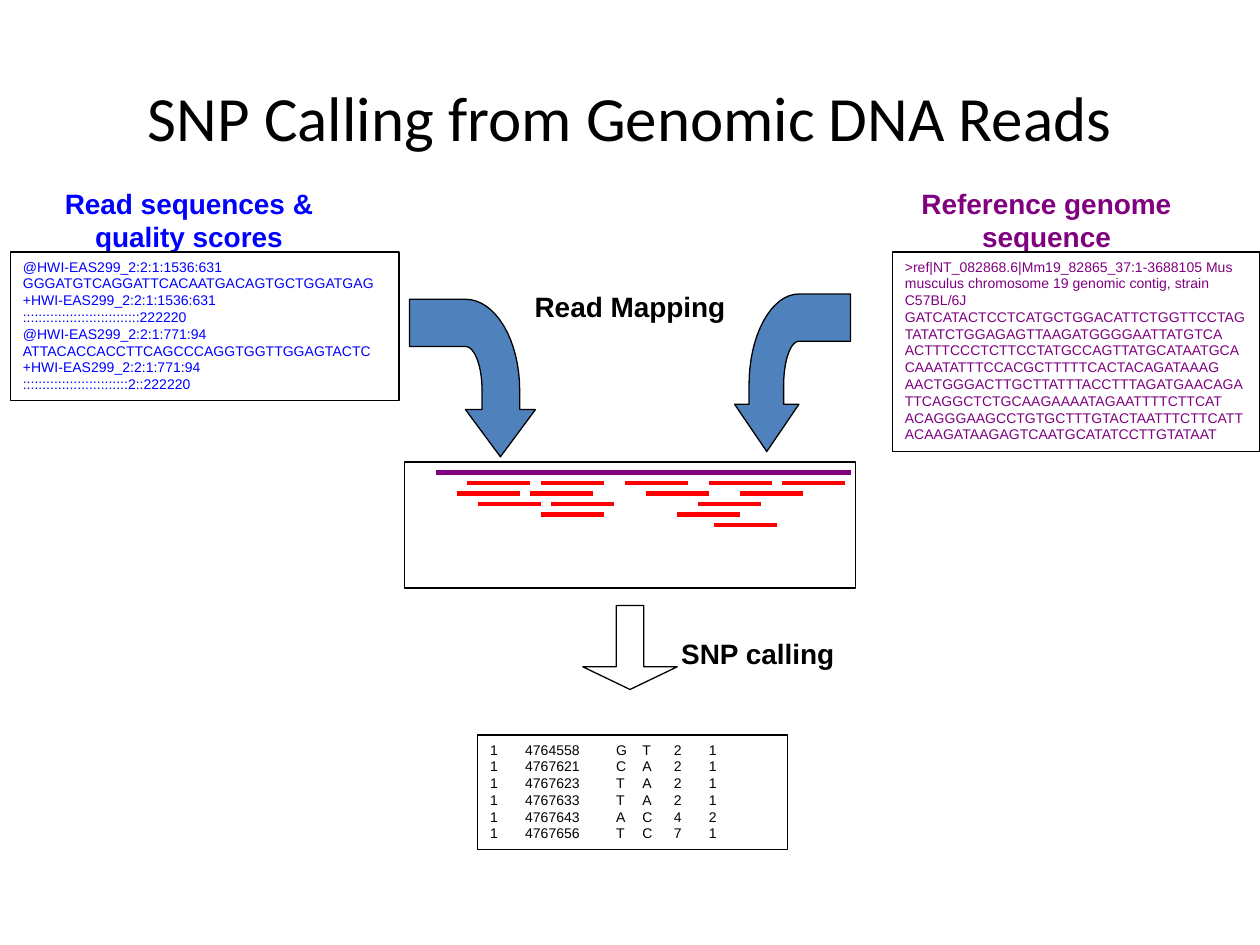
from math import cos, pi, sin
from lxml.etree import SubElement
from pptx import Presentation
from pptx.dml.color import RGBColor
from pptx.enum.shapes import MSO_CONNECTOR as Link, MSO_SHAPE as Form
from pptx.enum.text import MSO_ANCHOR as Anchor, PP_ALIGN as Align
from pptx.oxml.ns import qn
from pptx.util import Pt

BLACK = RGBColor(0x00, 0x00, 0x00)
WHITE = RGBColor(0xFF, 0xFF, 0xFF)
BLUE = RGBColor(0x00, 0x00, 0xFF)
PURPLE = RGBColor(0x80, 0x00, 0x80)
RED = RGBColor(0xFF, 0x00, 0x00)
STEEL = RGBColor(0x4F, 0x81, 0xBD)

FASTQ = """@HWI-EAS299_2:2:1:1536:631
GGGATGTCAGGATTCACAATGACAGTGCTGGATGAG
+HWI-EAS299_2:2:1:1536:631
::::::::::::::::::::::::::::::222220
@HWI-EAS299_2:2:1:771:94
ATTACACCACCTTCAGCCCAGGTGGTTGGAGTACTC
+HWI-EAS299_2:2:1:771:94
:::::::::::::::::::::::::::2::222220"""
CONTIG = """>ref|NT_082868.6|Mm19_82865_37:1-3688105 Mus musculus chromosome 19 genomic contig, strain C57BL/6J
GATCATACTCCTCATGCTGGACATTCTGGTTCCTAGTATATCTGGAGAGTTAAGATGGGGAATTATGTCA
ACTTTCCCTCTTCCTATGCCAGTTATGCATAATGCACAAATATTTCCACGCTTTTTCACTACAGATAAAG
AACTGGGACTTGCTTATTTACCTTTAGATGAACAGATTCAGGCTCTGCAAGAAAATAGAATTTTCTTCAT
ACAGGGAAGCCTGTGCTTTGTACTAATTTCTTCATTACAAGATAAGAGTCAATGCATATCCTTGTATAAT"""
SNPS = [
    (4764558, "G", "T", 2, 1),
    (4767621, "C", "A", 2, 1),
    (4767623, "T", "A", 2, 1),
    (4767633, "T", "A", 2, 1),
    (4767643, "A", "C", 4, 2),
    (4767656, "T", "C", 7, 1),
]
READS = [
    (267, 309, 357, 405, 447),
    (261, 303, 369, 423),
    (273, 315, 399),
    (309, 387),
    (408,),
]


class Board:
    """Draws styled elements, measured in points, on the current slide."""

    font, edge, bar = "Arial", 0.75, 2.5

    def __init__(self, slide):
        self.shapes = slide.shapes

    def fill_text(self, frame, text, size, color, bold=False, align=Align.LEFT, font=None):
        frame.text = text
        for para in frame.paragraphs:
            para.alignment = align
            for run in para.runs:
                run.font.name = font or self.font
                run.font.size = Pt(size)
                run.font.bold = bold
                run.font.color.rgb = color

    def label(self, text, x, y, w, h, color=BLACK, size=16, bold=True, font=None):
        frame = self.shapes.add_textbox(Pt(x), Pt(y), Pt(w), Pt(h)).text_frame
        frame.word_wrap = True
        frame.vertical_anchor = Anchor.MIDDLE
        self.fill_text(frame, text, size, color, bold, Align.CENTER, font)

    def paint(self, shape, fill):
        shape.shadow.inherit = False
        shape.line.color.rgb = BLACK
        shape.line.width = Pt(self.edge)
        if fill is None:
            shape.fill.background()
        else:
            shape.fill.solid()
            shape.fill.fore_color.rgb = fill

    def shape(self, form, x, y, w, h, fill=None):
        item = self.shapes.add_shape(form, Pt(x), Pt(y), Pt(w), Pt(h))
        self.paint(item, fill)
        return item

    def panel(self, text, x, y, w, h, color, stops=()):
        frame = self.shape(Form.RECTANGLE, x, y, w, h, WHITE).text_frame
        frame.word_wrap = True
        frame.vertical_anchor = Anchor.TOP
        self.fill_text(frame, text, 8, color)
        if stops:
            for para in frame.paragraphs:
                tabs = SubElement(para._p.get_or_add_pPr(), qn("a:tabLst"))
                for stop in stops:
                    SubElement(tabs, qn("a:tab"), pos=str(Pt(stop)), algn="l")

    def line(self, x, y, w, color):
        link = self.shapes.add_connector(Link.STRAIGHT, Pt(x), Pt(y), Pt(x + w), Pt(y))
        link.line.color.rgb = color
        link.line.width = Pt(self.bar)
        SubElement(link._element.spPr, qn("a:effectLst"))

    def bend(self, x, y, scale):
        turn = [pi / 2 * i / 16 for i in range(17)]
        outer = [(32 + 31 * cos(a), 52 - 52 * sin(a)) for a in turn]
        inner = [(32 + 9.5 * sin(a), 52 - 25 * cos(a)) for a in turn]
        dots = [(52, 90), (72, 63), (63, 63), *outer, (0, 0), (0, 27),
                *inner, (41.5, 63), (32, 63)]
        spots = [(Pt(x + scale * a), Pt(y + b)) for a, b in dots]
        pen = self.shapes.build_freeform(*spots[0])
        pen.add_line_segments(spots[1:], close=True)
        self.paint(pen.convert_to_shape(), STEEL)


def main():
    deck = Presentation()
    deck.slide_width, deck.slide_height = Pt(720), Pt(540)
    board = Board(deck.slides.add_slide(deck.slide_layouts[6]))

    board.label("SNP Calling from Genomic DNA Reads", 36, 21.6, 648, 90,
                size=36, bold=False, font="Calibri")
    board.label("Read Mapping", 290, 162, 140, 26.6)

    board.line(249, 270, 237, PURPLE)
    for row, starts in enumerate(READS, 1):
        for x in starts:
            board.line(x, 270 + 6 * row, 36, RED)
    board.shape(Form.RECTANGLE, 231, 264, 258, 72)

    board.label("Reference genome\nsequence", 480, 102.5, 236, 46, PURPLE)
    board.panel(CONTIG, 510, 144, 210, 114, PURPLE)
    board.label("Read sequences &\nquality scores", 18, 102.5, 180, 46, BLUE)
    board.panel(FASTQ, 6, 144, 222, 85, BLUE)

    arrow = board.shape(Form.DOWN_ARROW, 333, 346, 54, 48)
    arrow.adjustments[0], arrow.adjustments[1] = 0.29, 0.27
    board.label("SNP calling", 373, 360, 120, 26.6)
    table = "\n".join("\t".join(map(str, (1, *snp))) for snp in SNPS)
    board.panel(table, 273, 420, 177, 65.6, BLACK, (20, 72, 87, 105, 125))

    board.bend(234, 171, 1)
    board.bend(486, 168, -0.92)
    deck.save("out.pptx")


if __name__ == "__main__":
    main()
